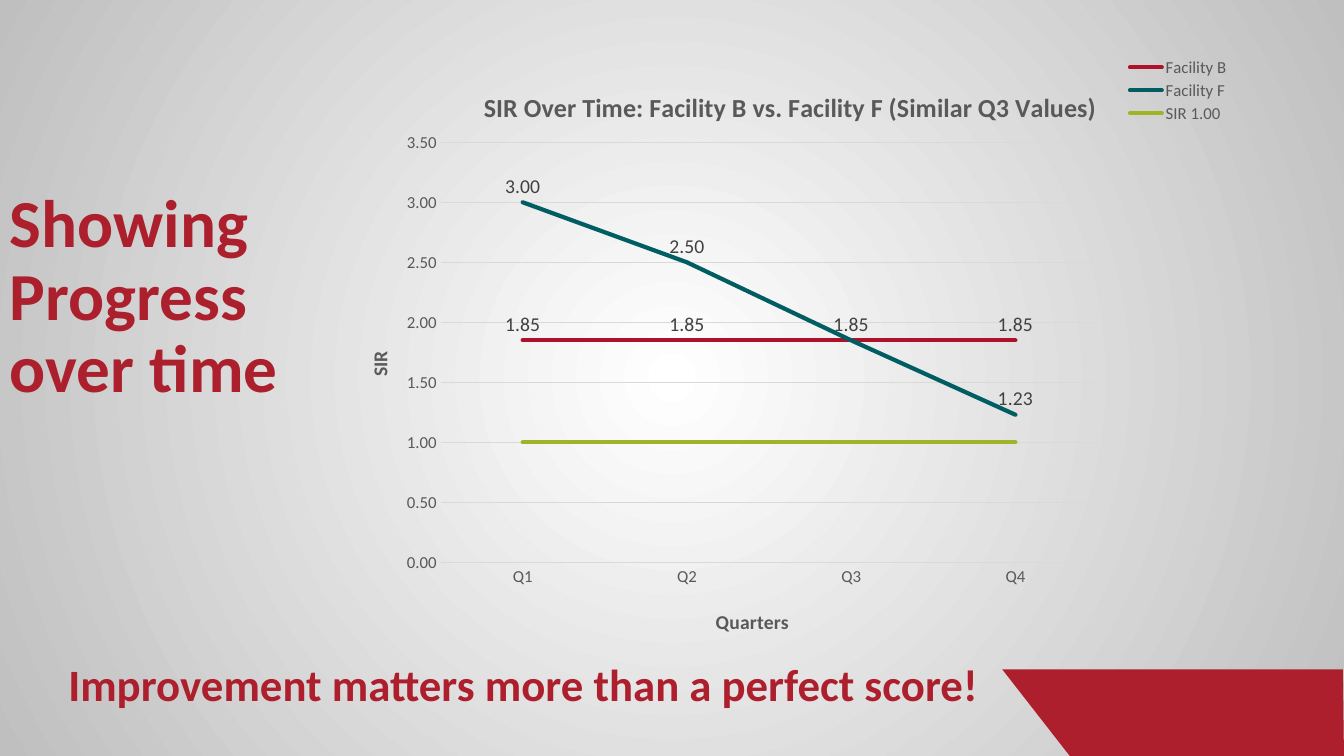
"""Build the slide on SIR progress over time."""
from lxml import etree
from pptx import Presentation
from pptx import util as u
from pptx.chart import data
from pptx.dml import color
from pptx.enum import chart as ch
from pptx.enum import text
from pptx.oxml import parse_xml
from pptx.oxml.ns import nsdecls, qn

WIDE, HIGH = u.Inches(13.33), u.Inches(7.5)
FONT = "Calibri"
HUES = {"red": "AD1F2C", "title": "AC1F2D", "white": "FFFFFF", "edge": "BFBFBF",
        "grey": "595959", "label": "404040", "grid": "D9D9D9"}
QUARTERS = ["Q1", "Q2", "Q3", "Q4"]
LINES = [("Facility B", [1.85] * 4, "AD122A", True),
         ("Facility F", [3, 2.5, 1.85, 1.23], "005E63", True),
         ("SIR 1.00", [1] * 4, "A1B426", False)]


def col(share):
    """Turn a percentage of the slide's width into a length."""
    return u.Emu(int(WIDE * share / 100))


def row(share):
    """Turn a percentage of the slide's height into a length."""
    return u.Emu(int(HIGH * share / 100))


def place(x, y, w, h):
    """Turn four percentages into left, top, width and height."""
    return col(x), row(y), col(w), row(h)


def rgb(hue):
    """Make a colour from a hex string."""
    return color.RGBColor.from_string(hue)


def style(font, size, hue, bold=False):
    """Set the face, size, colour and weight of a font."""
    font.name, font.size, font.bold = FONT, u.Pt(size), bold
    font.color.rgb = rgb(hue)


def glow(slide):
    """Fill the background from a light centre to darker edges."""
    fill = slide.background.fill
    fill.gradient()
    for stop, hue, at in zip(fill.gradient_stops, ("white", "edge"), (0, 1)):
        stop.color.rgb, stop.position = rgb(HUES[hue]), at
    grad = next(slide.element.iter(qn("a:gradFill")))
    grad.remove(grad.find(qn("a:lin")))
    grad.append(parse_xml(
        f'<a:path {nsdecls("a")} path="circle">'
        '<a:fillToRect l="50000" t="50000" r="50000" b="50000"/></a:path>'))


def wedge(slide, spots):
    """Draw a filled outline through the given percentages."""
    pts = [(col(x), row(y)) for x, y in spots]
    pen = slide.shapes.build_freeform(*pts[0])
    pen.add_line_segments(pts[1:], close=True)
    shape = pen.convert_to_shape()
    shape.shadow.inherit = False
    shape.fill.solid()
    shape.fill.fore_color.rgb = rgb(HUES["red"])
    shape.line.fill.background()


def write(slide, box, words, size, hue, wrap=False):
    """Add a bold line, or a wrapped heading set on the box's foot."""
    frame = slide.shapes.add_textbox(*place(*box)).text_frame
    frame.word_wrap = wrap
    para = frame.paragraphs[0]
    if wrap:
        frame.vertical_anchor = text.MSO_ANCHOR.BOTTOM
        frame.margin_top = frame.margin_bottom = 0
        para.line_spacing = 0.9
    run = para.add_run()
    run.text = words
    style(run.font, size, HUES[hue], True)


def pin(part, x, y, w=None, h=None, inner=False):
    """Fix a chart part at shares of the chart's size."""
    for old in part.findall(qn("c:layout")):
        part.remove(old)
    lay = etree.Element(qn("c:layout"))
    man = etree.SubElement(lay, qn("c:manualLayout"))
    marks = [("layoutTarget", "inner" if inner else None),
             ("xMode", "edge"), ("yMode", "edge"),
             ("x", x), ("y", y), ("w", w), ("h", h)]
    for tag, val in marks:
        if val is not None:
            etree.SubElement(man, qn(f"c:{tag}")).set("val", str(val))
    prior = part.find(qn("c:tx"))
    if prior is None:
        prior = part.find(qn("c:legendPos"))
    if prior is None:
        part.insert(0, lay)
    else:
        prior.addnext(lay)


def head(title, words, size, x, y):
    """Write a chart or axis title and pin it."""
    run = title.text_frame.paragraphs[0].add_run()
    run.text = words
    style(run.font, size, HUES["grey"], True)
    pin(title._element, x, y)


def axis(part, words, x, y):
    """Style the ticks and title of an axis."""
    part.major_tick_mark = part.minor_tick_mark = ch.XL_TICK_MARK.NONE
    style(part.tick_labels.font, 12, HUES["grey"])
    part.has_title = True
    head(part.axis_title, words, 14, x, y)


def rule(line, hue, size):
    """Set the colour and width of a line."""
    line.color.rgb, line.width = rgb(hue), u.Pt(size)


def trace(series, hue, named):
    """Style one series and its value labels."""
    series.smooth = False
    series.marker.style = ch.XL_MARKER_STYLE.NONE
    rule(series.format.line, hue, 3)
    series.format.line._ln.set("cap", "rnd")
    if named:
        tags = series.data_labels
        tags.show_value = True
        tags.position = ch.XL_LABEL_POSITION.ABOVE
        tags.number_format, tags.number_format_is_linked = "0.00", False
        style(tags.font, 14, HUES["label"])


def graph(slide, box):
    """Add the line chart of SIR by quarter."""
    feed = data.CategoryChartData(number_format="0.00")
    feed.categories = QUARTERS
    for name, vals, _, _ in LINES:
        feed.add_series(name, vals)
    chart = slide.shapes.add_chart(
        ch.XL_CHART_TYPE.LINE, *place(*box), feed).chart
    style(chart.font, 10, HUES["grey"])
    chart.has_title = True
    head(chart.chart_title,
         "SIR Over Time: Facility B vs. Facility F (Similar Q3 Values)",
         18.6, 0.16, 0.05)
    axis(chart.category_axis, "Quarters", 0.42, 0.92)
    rule(chart.category_axis.format.line, HUES["grid"], 0.75)
    value = chart.value_axis
    axis(value, "SIR", 0.03, 0.49)
    value.minimum_scale, value.maximum_scale, value.major_unit = 0, 3.5, 0.5
    value.tick_labels.number_format = "0.00"
    value.tick_labels.number_format_is_linked = False
    value.format.line.fill.background()
    rule(value.major_gridlines.format.line, HUES["grid"], 0.75)
    plot = chart.plots[0]
    plot.vary_by_categories = False
    for series, (_, _, hue, named) in zip(plot.series, LINES):
        trace(series, hue, named)
    plot.series[0].data_labels._element.insert(0, parse_xml(
        f'<c:dLbl {nsdecls("c")}><c:idx val="2"/><c:delete val="1"/></c:dLbl>'))
    chart.has_legend = True
    key = chart.legend
    key.position = ch.XL_LEGEND_POSITION.CORNER
    key.include_in_layout = False
    style(key.font, 12, HUES["grey"])
    pin(key._element, 0.88, 0, 0.12, 0.12)
    pin(chart._chartSpace.chart.plotArea, 0.117, 0.147, 0.733, 0.703, True)


def main():
    """Build and save the slide."""
    deck = Presentation()
    deck.slide_width, deck.slide_height = WIDE, HIGH
    slide = deck.slides.add_slide(deck.slide_layouts[6])
    glow(slide)
    wedge(slide, [(74.57, 88.53), (79.6, 100), (100, 100), (99.92, 88.53)])
    write(slide, (0, 7.2, 23.56, 46.67), "Showing Progress over time",
          48, "title", True)
    write(slide, (4.35, 86.27, 69.92, 8.53),
          "Improvement matters more than a perfect score!", 32, "red")
    graph(slide, (24.98, 7.2, 66.69, 79.07))
    deck.save("out.pptx")


if __name__ == "__main__":
    main()
